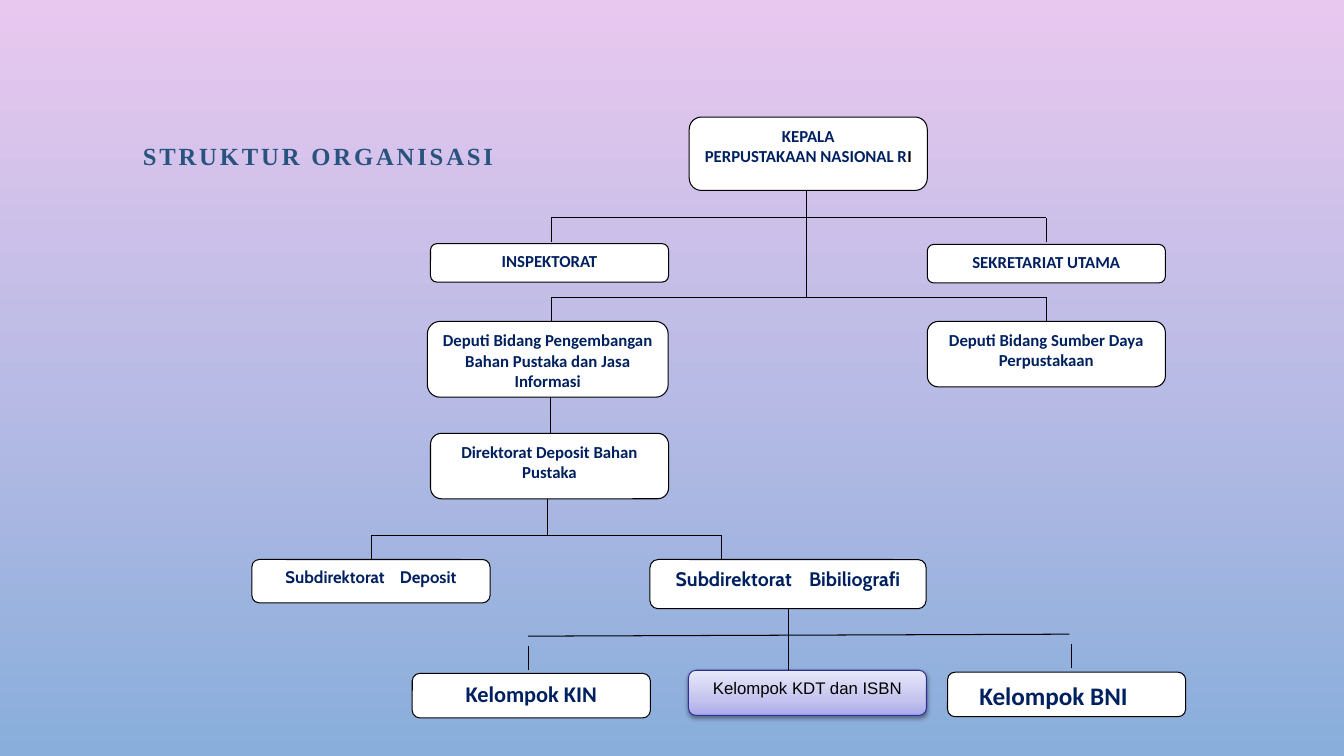
import copy
from dataclasses import dataclass

import lxml.etree
import pptx
import pptx.dml.color
import pptx.enum.shapes
import pptx.enum.text
import pptx.oxml.ns
import pptx.util

Cm = pptx.util.Cm
Pt = pptx.util.Pt
Align = pptx.enum.text.PP_ALIGN
qn = pptx.oxml.ns.qn


@dataclass(frozen=True)
class Theme:
    navy: str = "002060"
    blue: str = "27537E"
    black: str = "000000"
    white: str = "FFFFFF"
    edge: str = "2F2F98"
    sky: tuple = ((0, "E9C8EF"), (1, "89AEDB"))
    glow: tuple = ((0, "A9A9E9"), (0.35, "C4C4EF"), (1, "E8E8FA"))
    small: float = 12
    medium: float = 14
    large: float = 16
    huge: float = 18
    title: float = 17.6
    hair: float = 0.75
    after: float = 10


THEME = Theme()
BOLD = {"size": Pt(THEME.small), "name": "Calibri", "bold": True}
CABIN = {**BOLD, "name": "Cabin"}
PLAIN = {"size": Pt(THEME.small), "name": "Arial", "bold": False}


def tint(code):
    return pptx.dml.color.RGBColor.from_string(code)


def apply(target, values):
    for key, value in values.items():
        setattr(target, key, value)


def blend(fill, root, stops, angle):
    fill.gradient()
    fill.gradient_angle = angle
    group = root.find(".//" + qn("a:gsLst"))
    while len(group) < len(stops):
        group.append(copy.deepcopy(group[0]))
    for stop, (place, code) in zip(fill.gradient_stops, stops):
        stop.color.rgb = tint(code)
        stop.position = place


def shade(shape):
    effects = shape._element.spPr.find(qn("a:effectLst"))
    outer = lxml.etree.SubElement(
        effects, qn("a:outerShdw"), blurRad=str(Pt(3.1)), dist=str(Pt(1.6)),
        dir="5400000", rotWithShape="0")
    color = lxml.etree.SubElement(outer, qn("a:srgbClr"), val=THEME.black)
    lxml.etree.SubElement(color, qn("a:alpha"), val="38000")


def write(para, text, font, code=THEME.navy, track=0):
    run = para.add_run()
    run.text = text
    apply(run.font, font)
    run.font.color.rgb = tint(code)
    if track:
        run._r.get_or_add_rPr().set("spc", str(int(track * 100)))


def center(frame, after=THEME.after):
    para = frame.paragraphs[0]
    apply(para, {"alignment": Align.CENTER, "space_after": Pt(after)})
    return para


def label(slide, place, wrap=True):
    frame = slide.shapes.add_textbox(*map(Cm, place)).text_frame
    frame.word_wrap = wrap
    return frame


def box(slide, *place, edge=THEME.black):
    kind = pptx.enum.shapes.MSO_SHAPE.ROUNDED_RECTANGLE
    shape = slide.shapes.add_shape(kind, *map(Cm, place))
    shape.shadow.inherit = False
    shape.fill.solid()
    shape.fill.fore_color.rgb = tint(THEME.white)
    shape.line.color.rgb = tint(edge)
    shape.line.width = Pt(THEME.hair)
    apply(shape.text_frame, {
        "word_wrap": True,
        "vertical_anchor": pptx.enum.text.MSO_ANCHOR.TOP,
    })
    return shape


def unit(slide, text, *place, font=BOLD, after=THEME.after):
    frame = box(slide, *place).text_frame
    write(center(frame, after), text, font)


def branch(slide, name, *place, size, gap):
    para = center(box(slide, *place).text_frame)
    font = {**CABIN, "size": Pt(size)}
    write(para, "Subdirektorat", font)
    write(para, " ", font, track=gap)
    write(para, name, font)


def head(slide):
    frame = box(slide, 17.37, 2.95, 6, 1.85).text_frame
    write(center(frame, 0), "KEPALA", BOLD)
    para = frame.add_paragraph()
    para.alignment = Align.CENTER
    write(para, "PERPUSTAKAAN NASIONAL R", BOLD)
    write(para, "I", BOLD, THEME.black)


def focus(slide):
    shape = box(slide, 17.35, 16.89, 6, 1.14, edge=THEME.edge)
    blend(shape.fill, shape._element, THEME.glow, 90)
    shade(shape)
    write(center(shape.text_frame), "Kelompok KDT dan ISBN", PLAIN, THEME.black)


def line(slide, *ends):
    kind = pptx.enum.shapes.MSO_CONNECTOR.STRAIGHT
    link = slide.shapes.add_connector(kind, *map(Cm, ends))
    link.line.color.rgb = tint(THEME.black)
    link.line.width = Pt(THEME.hair)
    lxml.etree.SubElement(link._element.spPr, qn("a:effectLst"))


def stem(slide, x, top, foot):
    line(slide, x, top, x, foot)


def fork(slide, left, right, bar, foot):
    line(slide, left, bar, right, bar)
    for x in (left, right):
        stem(slide, x, bar, foot)


def main():
    deck = pptx.Presentation()
    apply(deck, {"slide_width": Cm(33.87), "slide_height": Cm(19.05)})
    slide = deck.slides.add_slide(deck.slide_layouts[6])
    blend(slide.background.fill, slide.element, THEME.sky, 270)

    para = label(slide, (3.35, 3.5, 10.54, 1.22)).paragraphs[0]
    para.line_spacing = 0.9
    serif = {"size": Pt(THEME.title), "name": "Times New Roman", "bold": True}
    write(para, "STRUKTUR ORGANISASI", serif, THEME.blue, 2)

    focus(slide)
    box(slide, 23.88, 16.94, 6, 1.12)
    unit(slide, "Kelompok KIN", 10.39, 16.97, 6, 1.12,
         font={**BOLD, "size": Pt(THEME.large)})
    head(slide)
    unit(slide, "SEKRETARIAT UTAMA", 23.37, 6.16, 6, 0.97)
    unit(slide, "INSPEKTORAT", 10.85, 6.14, 6, 0.97)
    unit(slide, "Deputi Bidang Pengembangan Bahan Pustaka dan Jasa Informasi",
         10.77, 8.1, 6.07, 1.91, after=0)
    unit(slide, "Deputi Bidang Sumber Daya Perpustakaan",
         23.37, 8.1, 6, 1.65, after=0)
    unit(slide, "Direktorat Deposit Bahan Pustaka", 10.85, 10.92, 6, 1.65)
    branch(slide, "Deposit", 6.35, 14.1, 6, 1.09, size=THEME.small, gap=8)
    branch(slide, "Bibiliografi", 16.38, 14.1, 6.96, 1.24,
           size=THEME.medium, gap=9)

    for ends in ((13.89, 26.37, 5.49, 6.1), (13.89, 26.37, 7.49, 8.1),
                 (9.37, 18.19, 13.49, 14.1)):
        fork(slide, *ends)
    line(slide, 13.31, 16.03, 26.95, 15.98)
    for ends in ((20.32, 4.8, 7.49), (13.87, 10.01, 10.92),
                 (13.79, 12.57, 13.49), (19.86, 15.34, 16.89),
                 (13.31, 16.28, 16.89), (27, 16.23, 16.84)):
        stem(slide, *ends)

    frame = label(slide, (24.38, 17.02, 4.34, 1.02), wrap=False)
    frame.auto_size = pptx.enum.text.MSO_AUTO_SIZE.SHAPE_TO_FIT_TEXT
    write(center(frame), "Kelompok BNI", {**BOLD, "size": Pt(THEME.huge)})

    deck.save("out.pptx")


if __name__ == "__main__":
    main()
